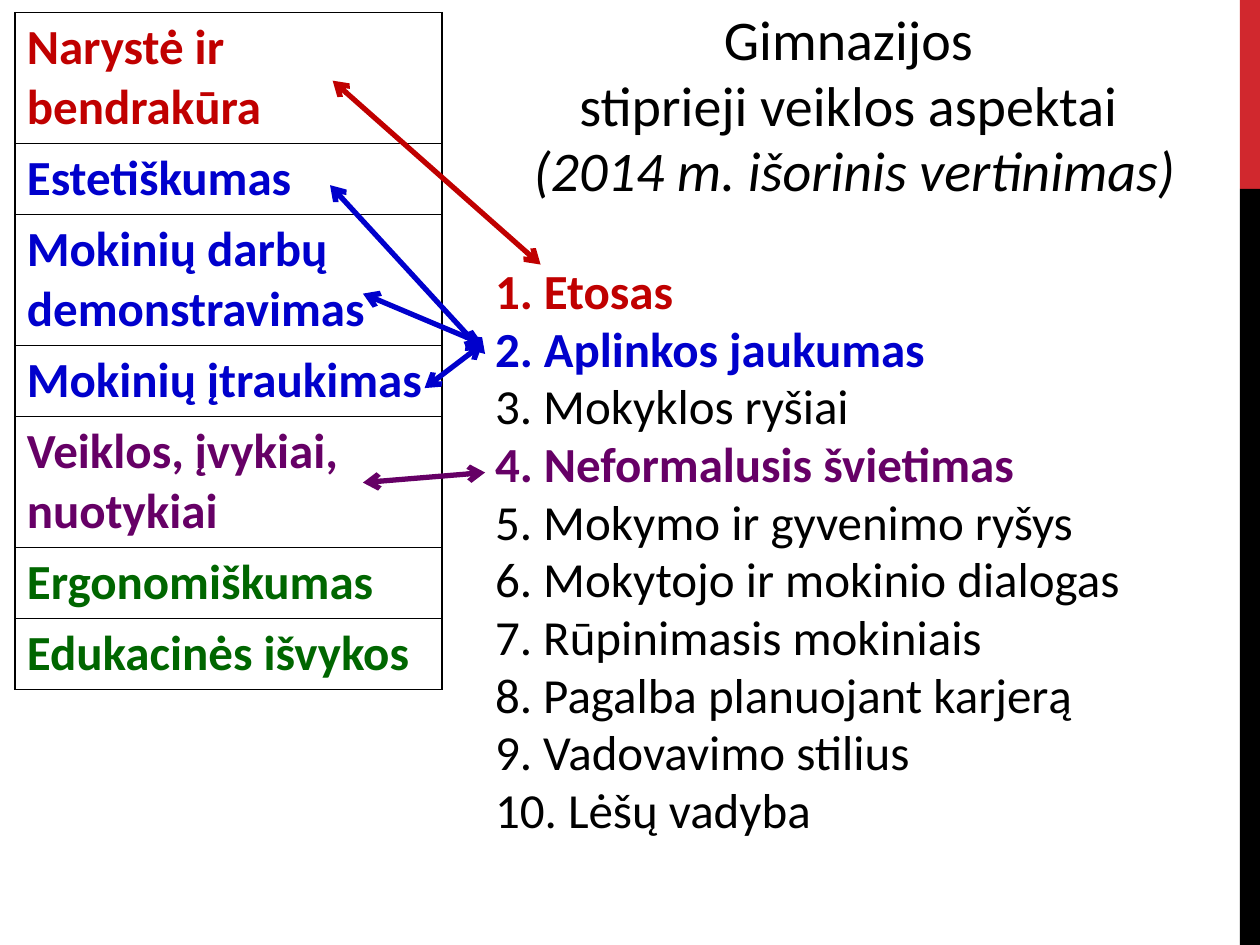
from lxml.etree import SubElement
from pptx import Presentation
from pptx.dml.color import RGBColor
from pptx.enum.shapes import MSO_CONNECTOR as Connector, MSO_SHAPE as Shape
from pptx.enum.text import PP_ALIGN as Align
from pptx.oxml.ns import qn
from pptx.util import Pt

BLACK, RED, BLUE, PURPLE, GREEN = "000000", "C00000", "0000CC", "660066", "006600"

TOPICS = [
    ("Narystė ir bendrakūra", RED, 2),
    ("Estetiškumas", BLUE, 1),
    ("Mokinių darbų demonstravimas", BLUE, 2),
    ("Mokinių įtraukimas", BLUE, 1),
    ("Veiklos, įvykiai, nuotykiai", PURPLE, 2),
    ("Ergonomiškumas", GREEN, 1),
    ("Edukacinės išvykos", GREEN, 1),
]
ASPECTS = [
    "Etosas", "Aplinkos jaukumas", "Mokyklos ryšiai", "Neformalusis švietimas",
    "Mokymo ir gyvenimo ryšys", "Mokytojo ir mokinio dialogas",
    "Rūpinimasis mokiniais", "Pagalba planuojant karjerą",
    "Vadovavimo stilius", "Lėšų vadyba",
]
ASPECT_COLORS = {1: RED, 2: BLUE, 4: PURPLE}
TITLE = ["Gimnazijos ", "stiprieji veiklos aspektai ", "(2014 m. išorinis vertinimas)"]
LINKS = [
    (188.6, 105.8, 277.2, 202.3, BLUE),
    (242.6, 221.8, 275.8, 196.6, BLUE),
    (207.4, 167.8, 275.8, 196.6, BLUE),
    (190.1, 46.1, 308.9, 151.2, RED),
    (207.4, 275.8, 277.2, 270, PURPLE),
]


def rgb(color):
    """Turn a hex string into a colour."""
    return RGBColor.from_string(color)


def style(paragraph, size, color, bold=False, italic=False):
    """Set the font of a whole paragraph."""
    font = paragraph.font
    font.name, font.size, font.bold, font.italic = "Calibri", Pt(size), bold, italic
    font.color.rgb = rgb(color)


def border(cell):
    """Draw a thin black line on all four sides of a cell."""
    properties = cell._tc.get_or_add_tcPr()
    for place, side in enumerate(("a:lnL", "a:lnR", "a:lnT", "a:lnB")):
        line = properties.makeelement(qn(side), {"w": str(Pt(1))})
        fill = SubElement(line, qn("a:solidFill"))
        SubElement(fill, qn("a:srgbClr"), val=BLACK)
        properties.insert(place, line)


def add_side_band(slide, left, top, width, height):
    """Place the red and black band, red on the top fifth."""
    red_height = height / 5
    for band_top, band_height, color in (
        (top, red_height, "D1282E"),
        (top + red_height, height - red_height, BLACK),
    ):
        band = slide.shapes.add_shape(
            Shape.RECTANGLE, Pt(left), Pt(band_top), Pt(width), Pt(band_height))
        band.shadow.inherit = False
        band.fill.solid()
        band.fill.fore_color.rgb = rgb(color)
        band.line.fill.background()


def add_topics(slide, left, top, width):
    """Place the table of topics, each row as high as its lines need."""
    heights = [6.5 + 34 * lines for _, _, lines in TOPICS]
    table = slide.shapes.add_table(
        len(TOPICS), 1, Pt(left), Pt(top), Pt(width), Pt(sum(heights))).table
    table.first_row = table.horz_banding = False
    for row, height, (topic, color, _) in zip(table.rows, heights, TOPICS):
        row.height = Pt(height)
        cell = row.cells[0]
        cell.fill.background()
        cell.margin_left = cell.margin_right = Pt(6.8)
        cell.margin_top = cell.margin_bottom = Pt(3.2)
        cell.text = topic
        style(cell.text_frame.paragraphs[0], 28, color, bold=True)
        border(cell)


def add_lines(slide, left, top, width, height, lines):
    """Place a text box with one paragraph a line and return the paragraphs."""
    frame = slide.shapes.add_textbox(Pt(left), Pt(top), Pt(width), Pt(height)).text_frame
    frame.word_wrap = True
    frame.text = "\n".join(lines)
    for paragraph in frame.paragraphs:
        paragraph.line_spacing = 0.98
    return frame.paragraphs


def add_title(slide, left, top, width, height):
    """Place the centred title with its last line in italics."""
    for line, paragraph in zip(TITLE, add_lines(slide, left, top, width, height, TITLE)):
        paragraph.alignment = Align.CENTER
        style(paragraph, 32, BLACK, italic=line == TITLE[-1])


def add_aspects(slide, left, top, width, height):
    """Place the numbered aspects, the linked ones bold and coloured."""
    lines = [f"{number}. {aspect}" for number, aspect in enumerate(ASPECTS, 1)]
    paragraphs = add_lines(slide, left, top, width, height, lines)
    for number, paragraph in enumerate(paragraphs, 1):
        style(paragraph, 28, ASPECT_COLORS.get(number, BLACK), bold=number in ASPECT_COLORS)


def add_link(slide, x1, y1, x2, y2, color):
    """Draw a double-headed arrow from a topic to an aspect."""
    link = slide.shapes.add_connector(Connector.STRAIGHT, Pt(x1), Pt(y1), Pt(x2), Pt(y2))
    link.line.color.rgb = rgb(color)
    link.line.width = Pt(3)
    for end in ("a:headEnd", "a:tailEnd"):
        SubElement(link.line._get_or_add_ln(), qn(end), type="arrow")
    SubElement(link._element.spPr, qn("a:effectLst"))


def main():
    """Build and save the slide."""
    deck = Presentation()
    deck.slide_width, deck.slide_height = Pt(720), Pt(540)
    slide = deck.slides.add_slide(deck.slide_layouts[6])
    add_side_band(slide, 708.5, 0, 11.5, 540)
    add_topics(slide, 8.6, 7.2, 244)
    add_aspects(slide, 275.8, 147, 425.5, 368.6)
    add_title(slide, 276.5, 0.7, 424, 145.4)
    for link in LINKS:
        add_link(slide, *link)
    deck.save("out.pptx")


if __name__ == "__main__":
    main()
